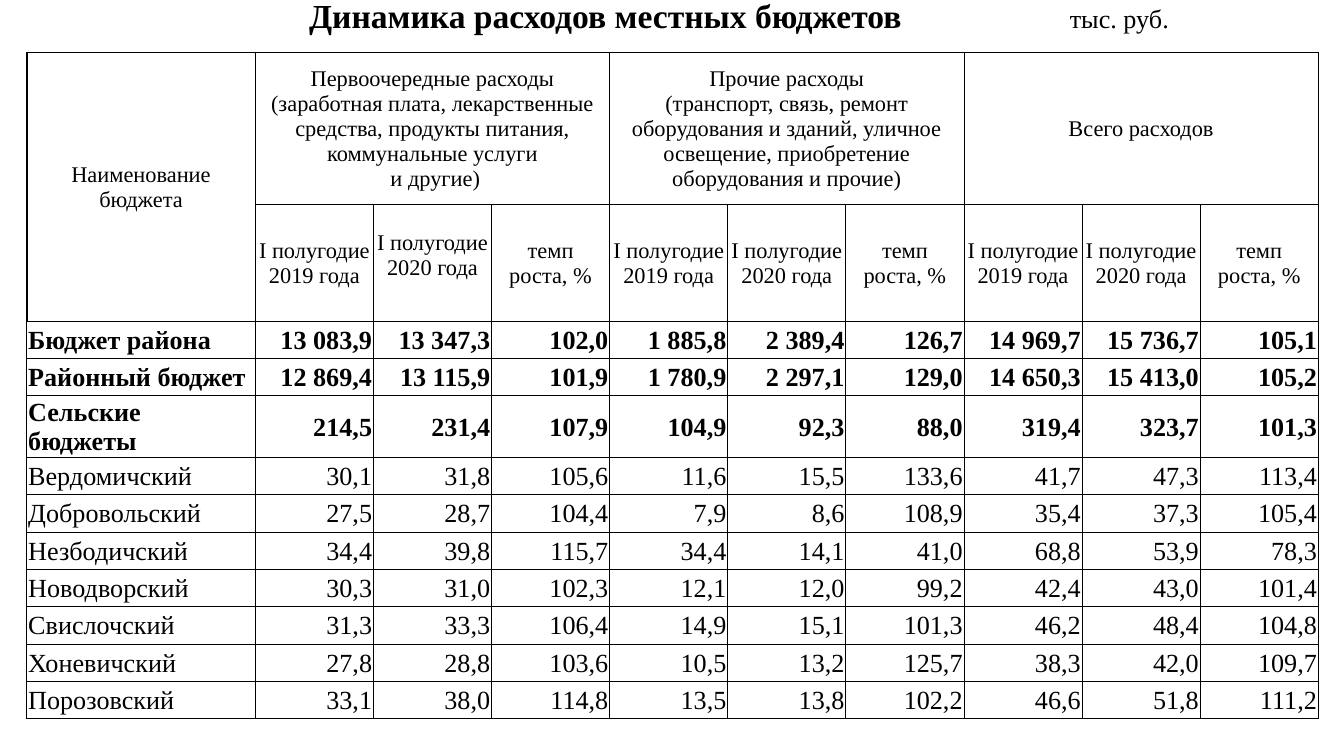
from lxml import etree
from pptx import Presentation
from pptx.dml.color import RGBColor
from pptx.enum.text import MSO_ANCHOR, PP_ALIGN
from pptx.oxml.ns import qn
from pptx.util import Inches, Pt

LEFT, CENTER, RIGHT = PP_ALIGN.LEFT, PP_ALIGN.CENTER, PP_ALIGN.RIGHT
TOP, MIDDLE = MSO_ANCHOR.TOP, MSO_ANCHOR.MIDDLE
COLORS = {"ink": "000000"}
FONT = "Times New Roman"

# Content
TITLE, UNIT = "Динамика расходов местных бюджетов", "тыс. руб."
NAME_HEADER = "Наименование бюджета"
GROUPS = [
    "Первоочередные расходы (заработная плата, лекарственные средства, "
    "продукты питания, коммунальные услуги\n и другие)",
    "Прочие расходы\n(транспорт, связь, ремонт оборудования и зданий, "
    "уличное освещение, приобретение оборудования и прочие)",
    "Всего расходов",
]
MEASURES = ["I полугодие\n2019 года", "I полугодие\n2020 года", "темп\nроста, %"]
BUDGETS = [
    ("Бюджет района", "13 083,9", "13 347,3", "102,0", "1 885,8", "2 389,4", "126,7",
     "14 969,7", "15 736,7", "105,1"),
    ("Районный бюджет", "12 869,4", "13 115,9", "101,9", "1 780,9", "2 297,1", "129,0",
     "14 650,3", "15 413,0", "105,2"),
    ("Сельские бюджеты", "214,5", "231,4", "107,9", "104,9", "92,3", "88,0",
     "319,4", "323,7", "101,3"),
    ("Вердомичский", "30,1", "31,8", "105,6", "11,6", "15,5", "133,6", "41,7", "47,3", "113,4"),
    ("Добровольский", "27,5", "28,7", "104,4", "7,9", "8,6", "108,9", "35,4", "37,3", "105,4"),
    ("Незбодичский", "34,4", "39,8", "115,7", "34,4", "14,1", "41,0", "68,8", "53,9", "78,3"),
    ("Новодворский", "30,3", "31,0", "102,3", "12,1", "12,0", "99,2", "42,4", "43,0", "101,4"),
    ("Свислочский", "31,3", "33,3", "106,4", "14,9", "15,1", "101,3", "46,2", "48,4", "104,8"),
    ("Хоневичский", "27,8", "28,8", "103,6", "10,5", "13,2", "125,7", "38,3", "42,0", "109,7"),
    ("Порозовский", "33,1", "38,0", "114,8", "13,5", "13,8", "102,2", "46,6", "51,8", "111,2"),
]
TOTAL_ROWS = 3  # bold rows at the top of the data
TALL_ROW = 2  # its name takes two lines

# Geometry in inches
X, Y, W = 0.2, -0.02, 9.61
NAME_W, TALL_H, DATA_H = 1.7, 0.46, 2.96
HEAD_HEIGHTS = [0.41, 1.13, 0.87]
TITLE_TABS = [2.09, 7.75]
N_VALUES = len(GROUPS) * len(MEASURES)
VALUE_W = (W - NAME_W) / N_VALUES
ROW_H = (DATA_H - TALL_H) / (len(BUDGETS) - 1)


def add_run(p, text, size=12, bold=False):
    r = p.add_run()
    r.text = text
    r.font.name, r.font.size, r.font.bold = FONT, Pt(size), bold
    r.font.color.rgb = RGBColor.from_string(COLORS["ink"])


def write(cell, text, size=12, bold=False, align=CENTER, anchor=MIDDLE):
    cell.vertical_anchor = anchor
    for i, line in enumerate(text.split("\n")):
        p = cell.text_frame.paragraphs[0] if i == 0 else cell.text_frame.add_paragraph()
        p.alignment = align
        add_run(p, line, size, bold)


def set_borders(cell, **widths):
    tc_pr = cell._tc.get_or_add_tcPr()
    for side in "LRTB":
        width = widths.get(side, 0.5)
        ln = etree.SubElement(tc_pr, qn(f"a:ln{side}"), w=str(Pt(width)))
        if width:
            fill = etree.SubElement(ln, qn("a:solidFill"))
            etree.SubElement(fill, qn("a:srgbClr"), val=COLORS["ink"])
        else:
            etree.SubElement(ln, qn("a:noFill"))


prs = Presentation()
prs.slide_width, prs.slide_height = Inches(10), Inches(10 * 9 / 16)
s = prs.slides.add_slide(prs.slide_layouts[6])

# Table grid
heights = HEAD_HEIGHTS + [TALL_H if i == TALL_ROW else ROW_H for i in range(len(BUDGETS))]
table = s.shapes.add_table(len(heights), N_VALUES + 1, Inches(X), Inches(Y),
                           Inches(W), Inches(sum(heights))).table
table.first_row = table.horz_banding = False
for c, column in enumerate(table.columns):
    column.width = Inches(VALUE_W if c else NAME_W)
for r, height in enumerate(heights):
    table.rows[r].height = Inches(height)
    for c in range(N_VALUES + 1):
        cell = table.cell(r, c)
        cell.margin_left = cell.margin_right = cell.margin_top = Inches(0.01)
        cell.margin_bottom = 0
        if r == 0:
            set_borders(cell, L=0, R=0, T=0, B=1)
        else:
            set_borders(cell, T=1 if r == 1 else 0.5, L=1 if c == 0 and r < 3 else 0.5)
        cell.fill.background()

# Title row: title and unit stand at tab stops
title = table.cell(0, 0)
title.merge(table.cell(0, N_VALUES))
write(title, "\t" + TITLE, size=18, bold=True, align=LEFT, anchor=TOP)
p = title.text_frame.paragraphs[0]
add_run(p, "\t" + UNIT, size=14)
tabs = etree.SubElement(p._p.get_or_add_pPr(), qn("a:tabLst"))
for position in TITLE_TABS:
    etree.SubElement(tabs, qn("a:tab"), pos=str(Inches(position)), algn="l")

# Two-level header
table.cell(1, 0).merge(table.cell(2, 0))
write(table.cell(1, 0), NAME_HEADER)
for g, group in enumerate(GROUPS):
    first = 1 + g * len(MEASURES)
    table.cell(1, first).merge(table.cell(1, first + len(MEASURES) - 1))
    write(table.cell(1, first), group)
    for m, measure in enumerate(MEASURES):
        write(table.cell(2, first + m), measure)
table.cell(2, 2).margin_bottom = Inches(0.12)  # this heading sits a little higher

# Budget rows
for i, budget in enumerate(BUDGETS):
    for c, text in enumerate(budget):
        write(table.cell(len(HEAD_HEIGHTS) + i, c), text, size=14, bold=i < TOTAL_ROWS,
              align=RIGHT if c else LEFT)

prs.save("out.pptx")
